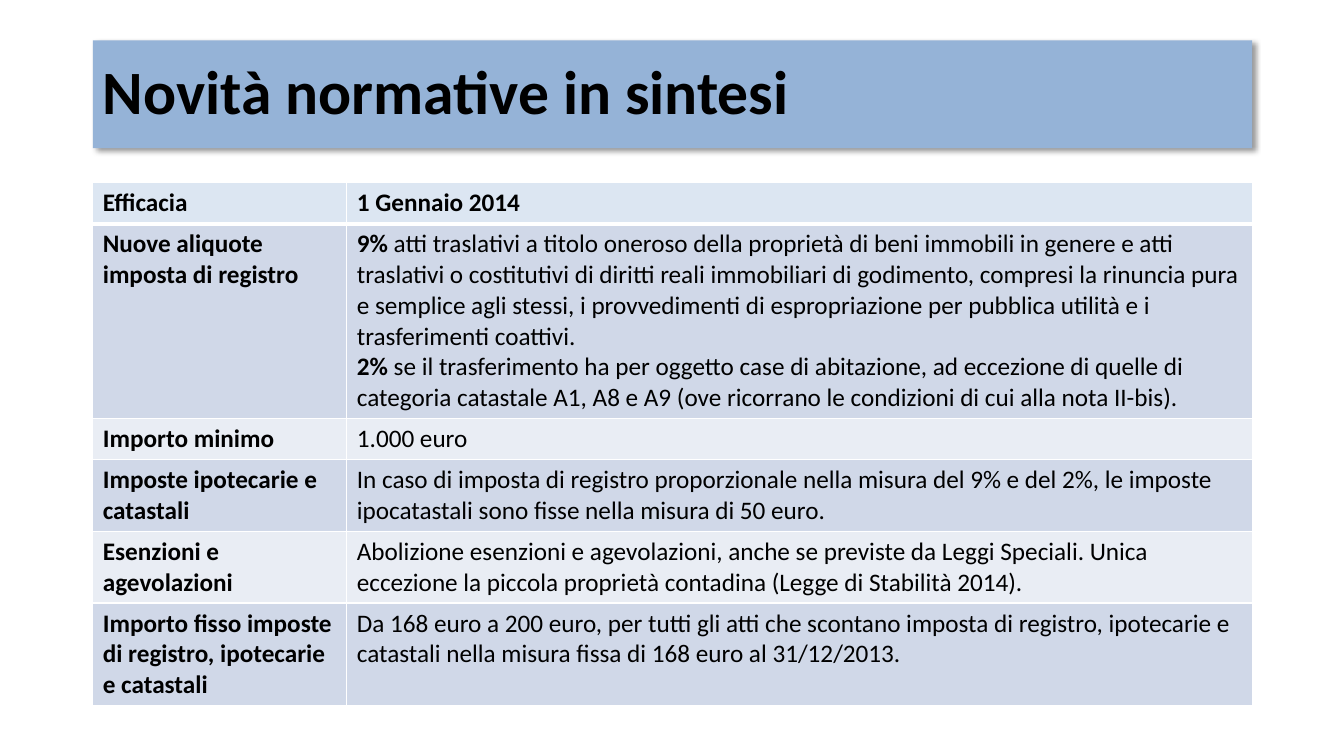
from lxml import etree
from pptx import Presentation
from pptx.dml.color import RGBColor
from pptx.enum.text import MSO_ANCHOR as Anchor, MSO_AUTO_SIZE as AutoSize, PP_ALIGN as Align
from pptx.oxml.ns import qn
from pptx.util import Inches, Pt

COLORS = {
    "banner": "95B3D7",
    "header": "DCE6F2",
    "odd_row": "D0D8E8",
    "even_row": "E9EDF4",
    "border": "FFFFFF",
    "text": "000000",
}
FONT = "Calibri"

# Slide grid
SLIDE_W, SLIDE_H = 13.33, 7.5
LEFT, WIDTH = 0.92, 11.5
BANNER_TOP, BANNER_H = 0.4, 1.07
TABLE_TOP, TABLE_H, ROW_H = 1.81, 5.11, 0.41
LABEL_W = 2.52

# Each row: label, then paragraphs of (bold lead, plain text)
MEASURES = [
    ("Efficacia", [("1 Gennaio 2014", "")]),
    ("Nuove aliquote imposta di registro", [
        ("9%", " atti traslativi a titolo oneroso della proprietà di beni immobili in genere "
               "e atti traslativi o costitutivi di diritti reali immobiliari di godimento, "
               "compresi la rinuncia pura e semplice agli stessi, i provvedimenti di "
               "espropriazione per pubblica utilità e i trasferimenti coattivi."),
        ("2%", " se il trasferimento ha per oggetto case di abitazione, ad eccezione di quelle "
               "di categoria catastale A1, A8 e A9 (ove ricorrano le condizioni di cui alla "
               "nota II-bis)."),
    ]),
    ("Importo minimo", [("", "1.000 euro")]),
    ("Imposte ipotecarie e catastali", [
        ("", "In caso di imposta di registro proporzionale nella misura del 9% e del 2%, "
             "le imposte ipocatastali sono fisse nella misura di 50 euro."),
    ]),
    ("Esenzioni e agevolazioni", [
        ("", "Abolizione esenzioni e agevolazioni, anche se previste da Leggi Speciali. "
             "Unica eccezione la piccola proprietà contadina (Legge di Stabilità 2014)."),
    ]),
    ("Importo fisso imposte di registro, ipotecarie e catastali", [
        ("", "Da 168 euro a 200 euro, per tutti gli atti che scontano imposta di registro, "
             "ipotecarie e catastali nella misura fissa di 168 euro al 31/12/2013."),
    ]),
]


def color(name):
    return RGBColor.from_string(COLORS[name])


def format_run(run, size, bold):
    run.font.name = FONT
    run.font.size = Pt(size)
    run.font.bold = bold
    run.font.color.rgb = color("text")


def add_shadow(shape):
    effects = etree.SubElement(shape._element.spPr, qn("a:effectLst"))
    shadow = etree.SubElement(effects, qn("a:outerShdw"), blurRad=str(Pt(4)),
                              dist=str(Pt(3)), dir=str(45 * 60000), algn="tl", rotWithShape="0")
    black = etree.SubElement(shadow, qn("a:srgbClr"), val=COLORS["text"])
    etree.SubElement(black, qn("a:alpha"), val="40000")


def fill_title(slide, wording):
    banner = slide.shapes.title
    banner.left, banner.top = Inches(LEFT), Inches(BANNER_TOP)
    banner.width, banner.height = Inches(WIDTH), Inches(BANNER_H)
    banner.fill.solid()
    banner.fill.fore_color.rgb = color("banner")
    banner.line.fill.background()
    add_shadow(banner)

    frame = banner.text_frame
    frame.text = wording
    frame.auto_size = AutoSize.NONE
    frame.vertical_anchor = Anchor.MIDDLE
    heading = frame.paragraphs[0]
    heading.alignment = Align.LEFT
    heading.line_spacing = 0.9
    format_run(heading.runs[0], 44, True)


def style_cell(cell, fill, bottom_width):
    # Borders come before the fill in the cell properties
    props = cell._tc.get_or_add_tcPr()
    for side, width in (("L", 1), ("R", 1), ("T", 1), ("B", bottom_width)):
        border = etree.SubElement(props, qn(f"a:ln{side}"), w=str(Pt(width)))
        solid = etree.SubElement(border, qn("a:solidFill"))
        etree.SubElement(solid, qn("a:srgbClr"), val=COLORS["border"])
    cell.fill.solid()
    cell.fill.fore_color.rgb = color(fill)


def write_cell(cell, paragraphs):
    frame = cell.text_frame
    for index, pieces in enumerate(paragraphs):
        paragraph = frame.add_paragraph() if index else frame.paragraphs[0]
        for wording, bold in zip(pieces, (True, False)):
            if wording:
                run = paragraph.add_run()
                run.text = wording
                format_run(run, 18, bold)


def add_measures(slide):
    frame = slide.shapes.add_table(len(MEASURES), 2, Inches(LEFT), Inches(TABLE_TOP),
                                   Inches(WIDTH), Inches(TABLE_H))
    table = frame.table
    table.columns[0].width = Inches(LABEL_W)
    table.columns[1].width = Inches(WIDTH - LABEL_W)
    for index, (label, details) in enumerate(MEASURES):
        # Rows grow to fit their text
        table.rows[index].height = Inches(ROW_H)
        fill = "header" if index == 0 else "odd_row" if index % 2 else "even_row"
        for cell, content in zip(table.rows[index].cells, ([(label, "")], details)):
            style_cell(cell, fill, 1 if index else 3)
            write_cell(cell, content)
    frame.height = Inches(TABLE_H)


def main():
    deck = Presentation()
    deck.slide_width, deck.slide_height = Inches(SLIDE_W), Inches(SLIDE_H)
    title_only = deck.slide_layouts[5]
    slide = deck.slides.add_slide(title_only)
    fill_title(slide, "Novità normative in sintesi")
    add_measures(slide)
    deck.save("out.pptx")


if __name__ == "__main__":
    main()
